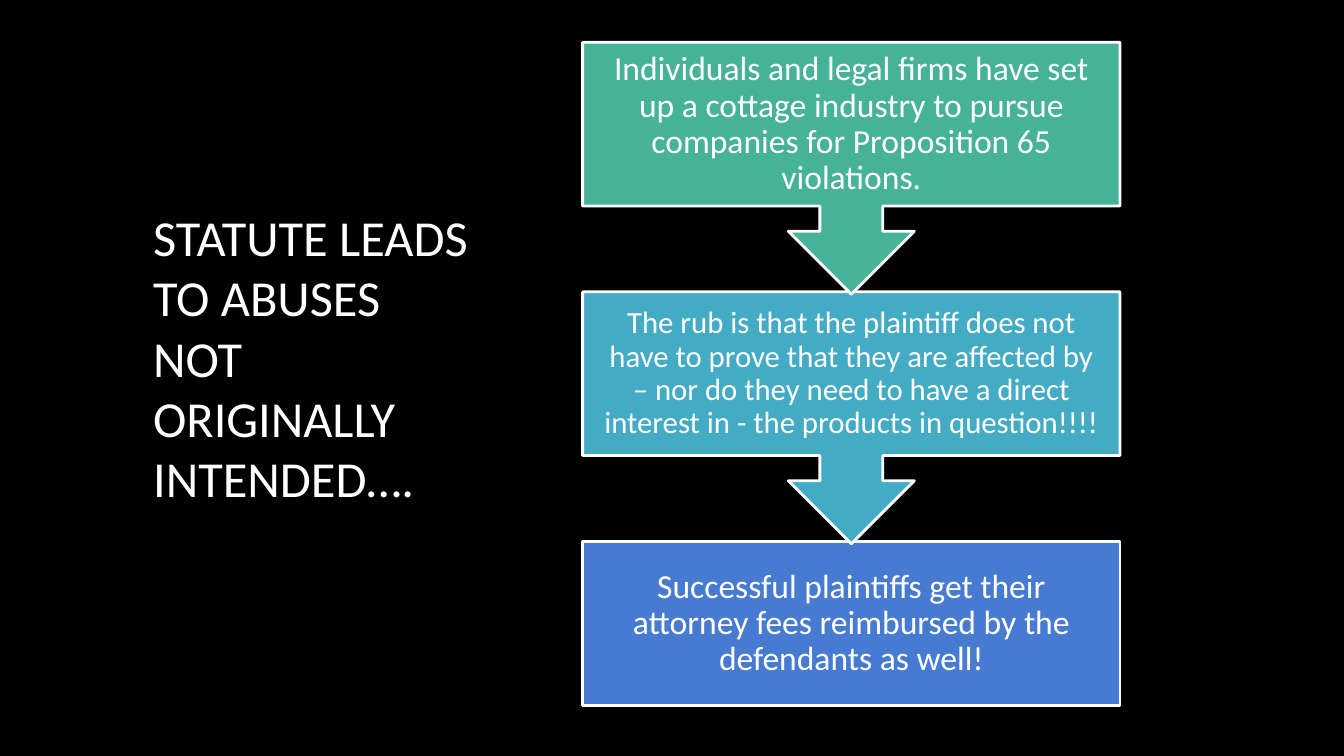
from pptx import Presentation
from pptx.dml.color import RGBColor
from pptx.enum.shapes import MSO_SHAPE
from pptx.enum.text import MSO_ANCHOR, PP_ALIGN
from pptx.util import Pt

WHITE = "FFFFFF"
LEFT, TOP, WIDTH = 416.2, 30.2, 383.8
BOX, CALLOUT, STEP = 117.4, 180, 178.2

# text, fill, text size, inset
STEPS = [
    ("Individuals and legal firms have set up a cottage industry to pursue "
     "companies for Proposition 65 violations.", "46B298", 24, 13.4),
    ("The rub is that the plaintiff does not have to prove that they are "
     "affected by – nor do they need to have a direct interest in - the "
     "products in question!!!!", "44ABC4", 22, 12.3),
    ("Successful plaintiffs get their attorney fees reimbursed by the "
     "defendants as well!", "477BD1", 24, 13.4),
]


def color(code):
    return RGBColor.from_string(code)


def style(item, values):
    for name, value in values.items():
        setattr(item, name, value)


def write(frame, text, size, inset, para):
    """Fill a text frame with one vertically centred paragraph."""
    style(frame, {"word_wrap": True, "vertical_anchor": MSO_ANCHOR.MIDDLE})
    style(frame, {f"margin_{side}": Pt(gap)
                  for side, gap in zip(("left", "top", "right", "bottom"), inset)})
    line = frame.paragraphs[0]
    style(line, para)
    run = line.add_run()
    run.text = text
    style(run.font, {"name": "Calibri", "size": Pt(size), "bold": False})
    run.font.color.rgb = color(WHITE)


def add_title(slide, text):
    title = slide.shapes.title
    style(title, {"left": Pt(102.2), "top": Pt(54),
                  "width": Pt(244.1), "height": Pt(401.8)})
    write(title.text_frame, text, 36, (7.2, 3.6, 7.2, 3.6),
          {"alignment": PP_ALIGN.LEFT})


def add_panel(slide, kind, top, height, fill, turn):
    panel = slide.shapes.add_shape(kind, Pt(LEFT), Pt(top), Pt(WIDTH), Pt(height))
    panel.rotation = turn
    panel.shadow.inherit = False
    panel.fill.solid()
    panel.fill.fore_color.rgb = color(fill)
    panel.line.color.rgb = color(WHITE)
    panel.line.width = Pt(2)


def add_step(slide, top, last, text, fill, size, inset):
    if last:
        add_panel(slide, MSO_SHAPE.RECTANGLE, top, BOX, fill, 0)
    else:
        add_panel(slide, MSO_SHAPE.UP_ARROW_CALLOUT, top, CALLOUT, fill, 180)
    label = slide.shapes.add_textbox(Pt(LEFT), Pt(top), Pt(WIDTH), Pt(BOX))
    write(label.text_frame, text, size, [inset] * 4,
          {"alignment": PP_ALIGN.CENTER, "line_spacing": 0.9})


def main():
    deck = Presentation()
    style(deck, {"slide_width": Pt(960), "slide_height": Pt(540)})
    slide = deck.slides.add_slide(deck.slide_layouts[5])
    slide.background.fill.solid()
    slide.background.fill.fore_color.rgb = color("000000")
    add_title(slide, "STATUTE LEADS TO ABUSES NOT ORIGINALLY INTENDED….")
    final = len(STEPS) - 1
    # The last step lies at the back so that each arrow tip overlaps the next box.
    for place in range(final, -1, -1):
        add_step(slide, TOP + place * STEP, place == final, *STEPS[place])
    deck.save("out.pptx")


if __name__ == "__main__":
    main()
